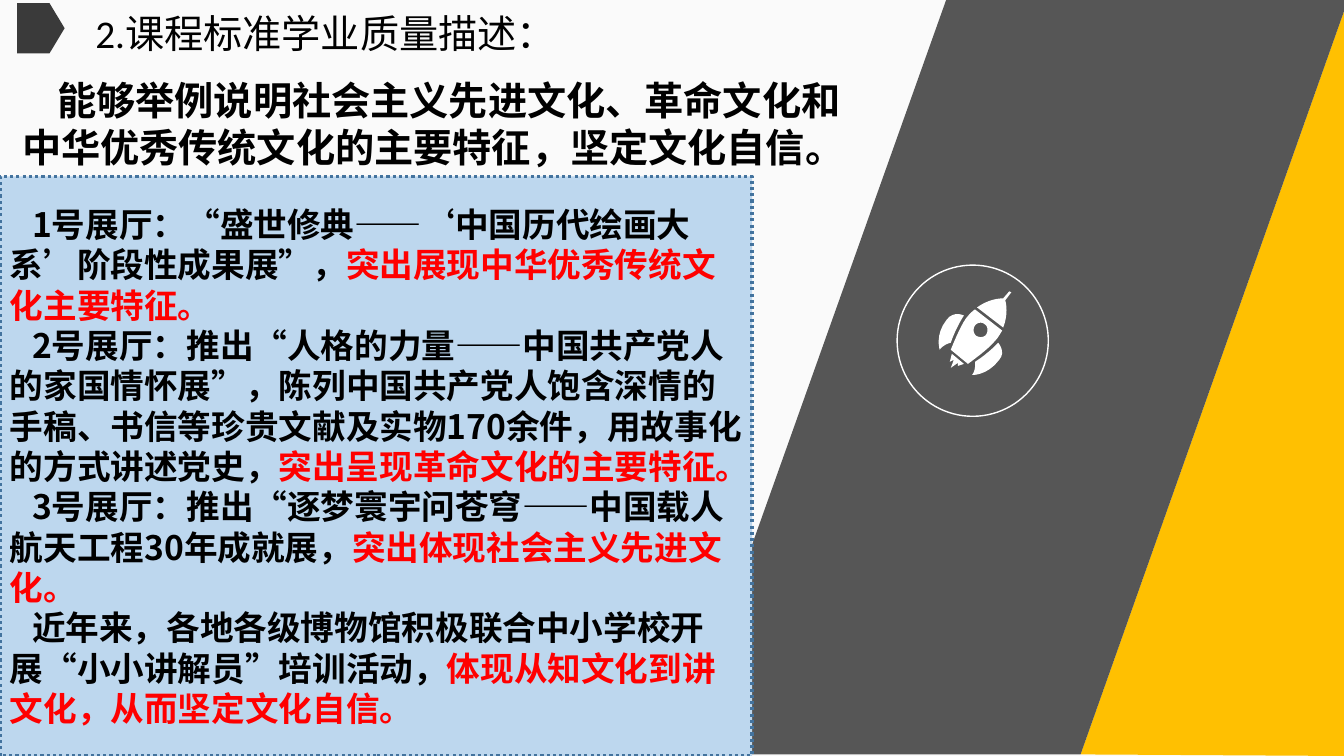
from lxml import etree
from pptx import Presentation
from pptx import util as u
from pptx.dml.color import RGBColor
from pptx.enum import dml, shapes, text
from pptx.oxml.ns import qn

BLACK = RGBColor(0x00, 0x00, 0x00)
WHITE = RGBColor(0xFF, 0xFF, 0xFF)
PAPER = RGBColor(0xFA, 0xFA, 0xFA)
GOLD = RGBColor(0xFF, 0xC0, 0x01)
SLATE = RGBColor(0x56, 0x56, 0x56)
COAL = RGBColor(0x3A, 0x3A, 0x3A)
SKY = RGBColor(0xBD, 0xD7, 0xEE)
NAVY = RGBColor(0x43, 0x73, 0x9E)
RED = RGBColor(0xFF, 0x00, 0x00)
CJK = "Noto Sans CJK SC"

# Rocket outlines in hundredths of an inch: pairs are lines, sixes are curves
ROCKET = [
    [(32, 83), (32, 83, 36, 79, 35, 70), (49, 61, 58, 51, 58, 51),
     (58, 51, 66, 60, 59, 68), (47, 84, 32, 83, 32, 83)],
    [(11, 58), (11, 58, 20, 35, 26, 27), (29, 23, 32, 20, 35, 18), (62, 39),
     (60, 42, 58, 46, 55, 49), (49, 57, 28, 72, 28, 72)],
    [(45, 33), (42, 30, 37, 31, 35, 34), (33, 37, 33, 41, 36, 44),
     (39, 46, 44, 46, 46, 43), (48, 40, 48, 35, 45, 33)],
    [(63, 7), (69, 0), (71, 1), (65, 9), (66, 12, 68, 23, 63, 36),
     (37, 16), (48, 8, 59, 7, 63, 7)],
    [(0, 58), (0, 58, -5, 43, 7, 28), (14, 19, 24, 24, 24, 24),
     (24, 24, 16, 36, 11, 51), (3, 53, 0, 58, 0, 58)],
    [(18, 74), (18, 71), (11, 76), (14, 68), (10, 70), (12, 62), (24, 72)],
]

HEAD = "能够举例说明社会主义先进文化、革命文化和中华优秀传统文化的主要特征，坚定文化自信。"
HALLS = [
    ("1号展厅：“盛世修典——‘中国历代绘画大系’阶段性成果展”，",
     "突出展现中华优秀传统文化主要特征。"),
    ("2号展厅：推出“人格的力量——中国共产党人的家国情怀展”，陈列中国共产党人饱含深情的"
     "手稿、书信等珍贵文献及实物170余件，用故事化的方式讲述党史，",
     "突出呈现革命文化的主要特征。"),
    ("3号展厅：推出“逐梦寰宇问苍穹——中国载人航天工程30年成就展，",
     "突出体现社会主义先进文化。"),
    ("近年来，各地各级博物馆积极联合中小学校开展“小小讲解员”培训活动，",
     "体现从知文化到讲文化，从而坚定文化自信。"),
]


def trace(steps, count=8):
    """Turn lines and cubic curves into a list of points."""
    dots = [steps[0]]
    for step in steps[1:]:
        if len(step) == 2:
            dots.append(step)
            continue
        ends = [dots[-1], step[:2], step[2:4], step[4:]]
        for i in range(1, count + 1):
            t = i / count
            mix = ((1 - t) ** 3, 3 * t * (1 - t) ** 2, 3 * t * t * (1 - t), t ** 3)
            dots.append(tuple(sum(m * e[k] for m, e in zip(mix, ends)) for k in (0, 1)))
    return dots


class Page:
    """Places elements by percent of the slide's width and height."""

    def __init__(self, deck):
        self.wide, self.high = deck.slide_width, deck.slide_height
        self.slide = deck.slides.add_slide(deck.slide_layouts[5])
        back = self.slide.background.fill
        back.solid()
        back.fore_color.rgb = PAPER

    def spot(self, x, y):
        return round(self.wide * x / 100), round(self.high * y / 100)

    def box(self, x, y, w, h):
        return self.spot(x, y) + self.spot(w, h)

    def paint(self, shape, fill=None, line=None, width=1):
        shape.shadow.inherit = False
        if fill is None:
            shape.fill.background()
        else:
            shape.fill.solid()
            shape.fill.fore_color.rgb = fill
        if line is None:
            shape.line.fill.background()
        else:
            shape.line.color.rgb = line
            shape.line.width = u.Pt(width)
        return shape

    def shape(self, kind, area, **look):
        return self.paint(self.slide.shapes.add_shape(kind, *self.box(*area)), **look)

    def outline(self, rings, fill):
        pen = None
        for ring in rings:
            start, *rest = [self.spot(*dot) for dot in ring]
            if pen is None:
                pen = self.slide.shapes.build_freeform(*start)
            else:
                pen.move_to(*start)
            pen.add_line_segments(rest, close=True)
        return self.paint(pen.convert_to_shape(), fill)

    def label(self, shape, paras, size, font=CJK, bold=True, indent=0, wrap=True):
        frame = shape.text_frame
        frame.word_wrap = wrap
        frame.auto_size = text.MSO_AUTO_SIZE.NONE
        frame.vertical_anchor = text.MSO_ANCHOR.MIDDLE
        for i, runs in enumerate(paras):
            para = frame.add_paragraph() if i else frame.paragraphs[0]
            para.alignment = text.PP_ALIGN.LEFT
            para.line_spacing = u.Pt(size * 1.2)
            para.font.size, para.font.name, para.font.bold = u.Pt(size), font, bold
            etree.SubElement(para.font._rPr, qn("a:ea")).set("typeface", CJK)
            para._p.pPr.set("marL", "0")
            para._p.pPr.set("indent", str(u.Inches(indent)))
            for words, color in runs:
                run = para.add_run()
                run.text = words
                run.font.color.rgb = color

    def title(self, words, area, size):
        shape = self.slide.shapes.title
        shape.left, shape.top, shape.width, shape.height = self.box(*area)
        shape.text_frame.margin_left = 0
        self.label(shape, [[(words, BLACK)]], size, "Calibri", False, wrap=False)

    def note(self, words, area, size, indent):
        shape = self.slide.shapes.add_textbox(*self.box(*area))
        self.label(shape, [[(words, BLACK)]], size, indent=indent)


def main():
    deck = Presentation()
    deck.slide_width, deck.slide_height = u.Inches(13.33), u.Inches(7.5)
    page = Page(deck)
    kinds = shapes.MSO_SHAPE

    # Slanted bands
    page.outline([[(100, 1.5), (100, 100), (80.4, 99.8)]], GOLD)
    page.outline([[(70.4, 0), (100, 0), (100, 1.5), (80.4, 99.8), (50.4, 99.8)]], SLATE)

    # Rocket in a ring
    page.shape(kinds.OVAL, (66.75, 35.07, 11.25, 20), line=WHITE)
    rings = [[(69.92 + x / 13.33, 38.53 + y / 7.5) for x, y in trace(part)]
             for part in ROCKET]
    page.outline(rings, WHITE)

    # Title and its marker
    mark = page.shape(kinds.PENTAGON, (1.28, 0.4, 3.53, 6.67), fill=COAL)
    mark.adjustments[0] = 0.32
    page.title("2.课程标准学业质量描述：", (7.1, 0.6, 34, 7.6), 28)

    # Standard and the exhibition halls
    page.note(HEAD, (0.9, 9.4, 64.14, 13.87), 28, 0.35)
    halls = page.shape(kinds.RECTANGLE, (0, 23.33, 55.96, 76.67),
                       fill=SKY, line=NAVY, width=2.25)
    halls.line.dash_style = dml.MSO_LINE.ROUND_DOT
    page.label(halls, [[(fact, BLACK), (point, RED)] for fact, point in HALLS],
               24, indent=0.22)

    deck.save("out.pptx")


if __name__ == "__main__":
    main()
